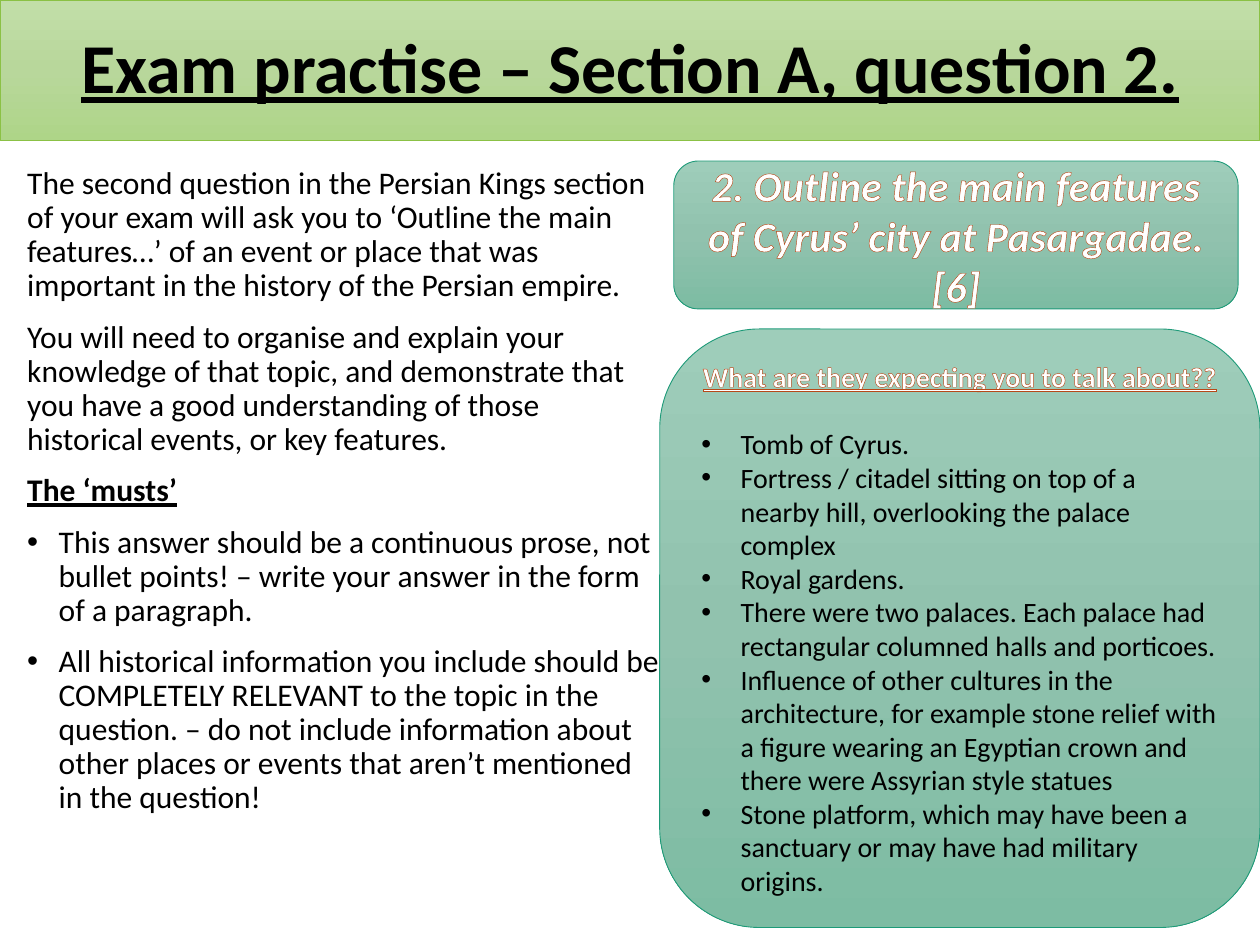
from copy import deepcopy
from lxml.etree import SubElement
from pptx import Presentation
from pptx.dml.color import RGBColor
from pptx.enum.shapes import MSO_SHAPE
from pptx.enum.text import MSO_ANCHOR, PP_ALIGN
from pptx.oxml import parse_xml
from pptx.oxml.ns import nsdecls, qn
from pptx.util import Pt

BLACK = RGBColor(0x00, 0x00, 0x00)
WHITE = RGBColor(0xFF, 0xFF, 0xFF)
RUST = RGBColor(0xB7, 0x49, 0x19)
LIME = RGBColor(0x8B, 0xC1, 0x45)
TEAL = RGBColor(0x1D, 0x9A, 0x78)
LIMES = [RGBColor(0xC2, 0xDE, 0xA8), RGBColor(0xB8, 0xD7, 0x9B), RGBColor(0xAE, 0xD5, 0x88)]
TEALS = [RGBColor(0x9E, 0xCD, 0xBA), RGBColor(0x91, 0xC2, 0xAE), RGBColor(0x7D, 0xBC, 0xA3)]

INTRO = [
    "The second question in the Persian Kings section of your exam will ask you to ‘Outline the main features…’ of an event or place that was important in the history of the Persian empire.",
    "You will need to organise and explain your knowledge of that topic, and demonstrate that you have a good understanding of those historical events, or key features.",
]
MUSTS = [
    "This answer should be a continuous prose, not bullet points! – write your answer in the form of a paragraph.",
    "All historical information you include should be COMPLETELY RELEVANT to the topic in the question. – do not include information about other places or events that aren’t mentioned in the question!",
]
POINTS = [
    "Tomb of Cyrus.",
    "Fortress / citadel sitting on top of a nearby hill, overlooking the palace complex",
    "Royal gardens.",
    "There were two palaces. Each palace had rectangular columned halls and porticoes.",
    "Influence of other cultures in the architecture, for example stone relief with a figure wearing an Egyptian crown and there were Assyrian style statues",
    "Stone platform, which may have been a sanctuary or may have had military origins.",
]


class Deck:
    """Holds the text style and the current slide, and draws each kind of element."""

    def __init__(self, wide, high):
        self.show = Presentation()
        self.show.slide_width, self.show.slide_height = Pt(wide), Pt(high)
        self.slide = self.show.slides.add_slide(self.show.slide_layouts[6])
        self.font = {"name": "Calibri", "bold": False, "italic": False, "underline": False}

    def panel(self, kind, box, tints, edge):
        shape = self.slide.shapes.add_shape(kind, *map(Pt, box))
        shape.shadow.inherit = False
        fill = shape.fill
        fill.gradient()
        fill.gradient_angle = 270
        stops = shape._element.spPr.find(".//" + qn("a:gsLst"))
        stops.insert(1, deepcopy(stops[0]))
        for stop, tint, place in zip(fill.gradient_stops, tints, (0, 0.5, 1)):
            stop.color.rgb, stop.position = tint, place
        shape.line.color.rgb, shape.line.width = edge, Pt(0.5)
        return self.frame(shape, MSO_ANCHOR.MIDDLE)

    def text(self, box):
        return self.frame(self.slide.shapes.add_textbox(*map(Pt, box)), MSO_ANCHOR.TOP)

    def frame(self, shape, anchor):
        frame = shape.text_frame
        frame.word_wrap, frame.vertical_anchor = True, anchor
        return frame

    def para(self, frame, words, size, color=BLACK, hang=0, edge=None, form=None, **font):
        first = frame.paragraphs[0]
        para = frame.add_paragraph() if first.runs else first
        if hang:
            props = para._p.get_or_add_pPr()
            props.set("marL", str(Pt(hang)))
            props.set("indent", str(-Pt(hang)))
            SubElement(props, qn("a:buFont")).set("typeface", "Arial")
            SubElement(props, qn("a:buChar")).set("char", "•")
        for key, value in ({"alignment": PP_ALIGN.LEFT} | (form or {})).items():
            setattr(para, key, value)
        run = para.add_run()
        run.text = words
        for key, value in (self.font | {"size": Pt(size)} | font).items():
            setattr(run.font, key, value)
        run.font.color.rgb = color
        if edge:
            line = f'<a:ln {nsdecls("a")} w="{Pt(0.8)}"><a:solidFill><a:srgbClr val="{edge}"/></a:solidFill></a:ln>'
            run._r.get_or_add_rPr().insert(0, parse_xml(line))


def main():
    deck = Deck(720, 540)
    mid = {"alignment": PP_ALIGN.CENTER}
    tight = {"line_spacing": 0.9}
    gap = tight | {"space_before": Pt(10)}

    title = deck.panel(MSO_SHAPE.RECTANGLE, (0, 0, 720, 80.5), LIMES, LIME)
    deck.para(title, "Exam practise – Section A, question 2.", 40,
              form=mid | tight, bold=True, underline=True)

    guide = deck.text((8.5, 92, 376.5, 343))
    for order, words in enumerate(INTRO):
        deck.para(guide, words, 18, form=gap if order else tight)
    deck.para(guide, "The ‘musts’", 18, form=gap, bold=True, underline=True)
    for words in MUSTS:
        deck.para(guide, words, 18, hang=18, form=gap)

    task = deck.panel(MSO_SHAPE.ROUNDED_RECTANGLE, (385, 92, 322.5, 84.5), TEALS, TEAL)
    deck.para(task, "2. Outline the main features of Cyrus’ city at Pasargadae. [6]", 24, WHITE,
              edge=RUST, form=mid, bold=True, italic=True)

    hints = deck.panel(MSO_SHAPE.ROUNDED_RECTANGLE, (377, 188, 343, 342), TEALS, TEAL)
    deck.para(hints, "What are they expecting you to talk about??", 16, WHITE,
              edge=RUST, form=mid, bold=True, underline=True)
    for order, words in enumerate(POINTS):
        deck.para(hints, words, 16, hang=22.5, form={"space_before": Pt(0 if order else 19.5)})

    deck.show.save("out.pptx")


if __name__ == "__main__":
    main()
